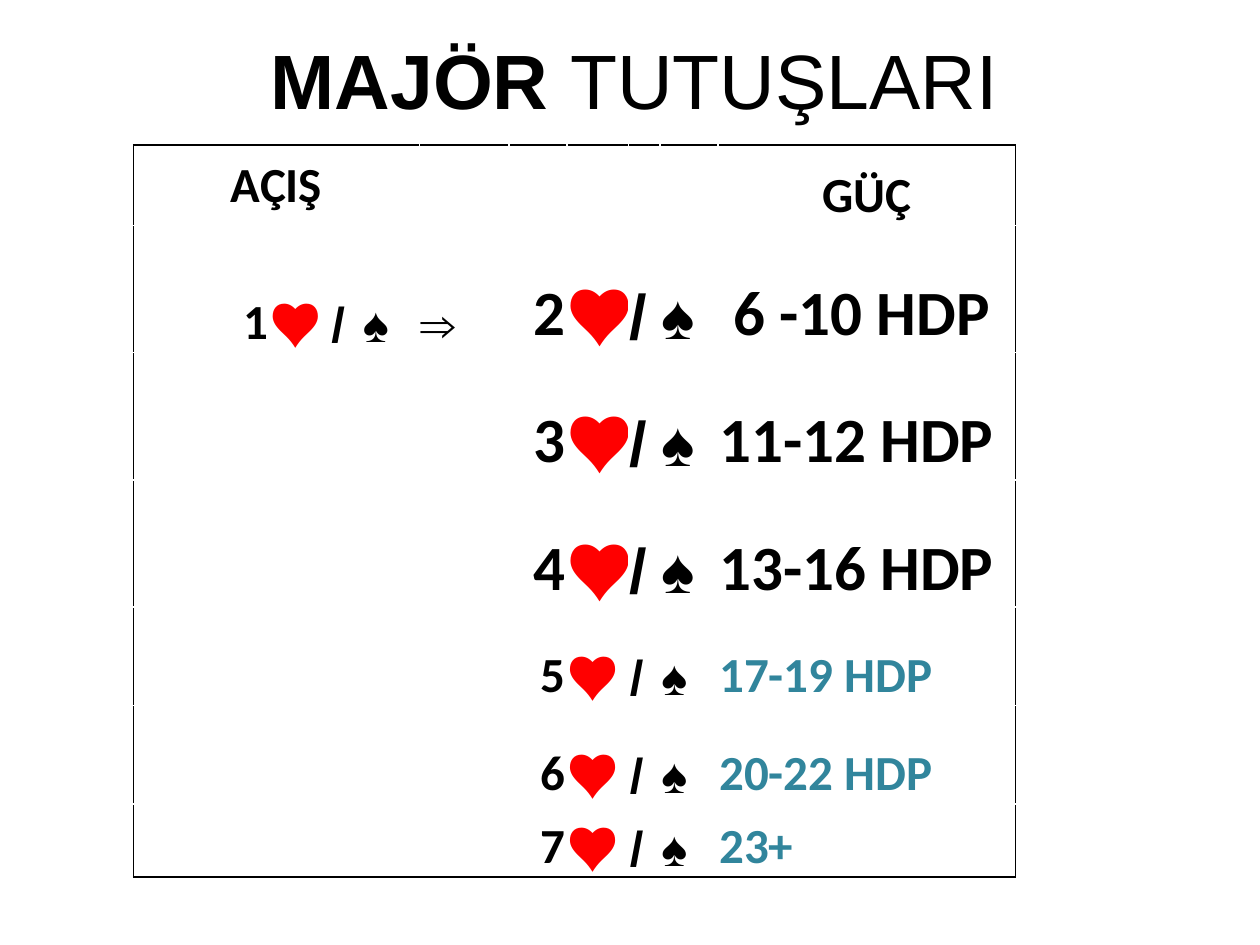
"""Build the slide of major suit raises with their strength ranges."""
from lxml import etree
from pptx import Presentation, util as u
from pptx.dml.color import RGBColor
from pptx.enum import text as t
from pptx.oxml.ns import qn

INK = {"black": "000000", "red": "FF0000", "teal": "31859C", "white": "FFFFFF"}
MID, LOW = t.MSO_ANCHOR.MIDDLE, t.MSO_ANCHOR.BOTTOM
LEFT, MIDDLE, RIGHT = t.PP_ALIGN.LEFT, t.PP_ALIGN.CENTER, t.PP_ALIGN.RIGHT


def write(para, words, size=28, font="Calibri", ink="black", bold=True, align=LEFT):
    para.alignment = align
    run = para.add_run()
    run.text = words
    run.font.size = u.Pt(size)
    run.font.name = font
    run.font.bold = bold
    run.font.color.rgb = RGBColor.from_string(INK[ink])


def edge(cell, sides):
    props = cell._tc.get_or_add_tcPr()
    for spot, side in enumerate(sides):
        line = etree.Element(qn("a:ln" + side), w=str(u.Pt(1)))
        fill = etree.SubElement(line, qn("a:solidFill"))
        etree.SubElement(fill, qn("a:srgbClr"), val=INK["black"])
        props.insert(spot, line)


deck = Presentation()
deck.slide_width, deck.slide_height = u.Inches(10), u.Inches(7.5)
slide = deck.slides.add_slide(deck.slide_layouts[6])

wide = [1.08, 0.48, 0.25, 0.46, 0.71, 0.46, 0.49, 0.25, 0.46, 2.36]
high = [0.64, 1.01, 1.01, 1.01, 0.78, 0.78, 0.58]
frame = slide.shapes.add_table(len(high), len(wide), u.Inches(1.06), u.Inches(1.15),
                               u.Inches(sum(wide)), u.Inches(sum(high)))
grid = frame.table
grid.first_row = grid.horz_banding = False
for col, width in zip(grid.columns, wide):
    col.width = u.Inches(width)
for row, height in zip(grid.rows, high):
    row.height = u.Inches(height)

for r in range(len(high)):
    for c in range(len(wide)):
        cell = grid.cell(r, c)
        cell.fill.background()
        cell.vertical_anchor = LOW
        cell.margin_left = cell.margin_right = cell.margin_top = u.Inches(0.01)
        cell.margin_bottom = 0
        rim = {"L": c == 0, "R": c == len(wide) - 1, "T": r == 0, "B": r == len(high) - 1}
        edge(cell, [side for side, on in rim.items() if on])

start = grid.cell(0, 0)
start.merge(grid.cell(0, 3))
start.vertical_anchor = MID
write(start.text_frame.paragraphs[0], "AÇIŞ", align=MIDDLE)
write(grid.cell(0, 9).text_frame.paragraphs[0], "GÜÇ", align=MIDDLE)
write(grid.cell(1, 4).text_frame.paragraphs[0], "⇒", font="Arial")

bids = [(1, 0, "1", 28)]
power = [" 6 -10 HDP", "11-12 HDP", "13-16 HDP", "17-19 HDP", "20-22 HDP", "23+"]
for r, words in enumerate(power, 1):
    size, ink = (36, "black") if r < 4 else (28, "teal")
    bids.append((r, 5, str(r + 1), size))
    cell = grid.cell(r, 9)
    write(cell.text_frame.paragraphs[0], words, size=size, ink=ink)
    if r > 3:
        cell.fill.solid()
        cell.fill.fore_color.rgb = RGBColor.from_string(INK["white"])

for r, c, level, size in bids:
    parts = [(level, "Calibri", "black", RIGHT), ("♥", "Calibri", "red", LEFT),
             ("/", "Arial", "black", LEFT), ("♠", "Arial", "black", LEFT)]
    for step, (words, font, ink, align) in enumerate(parts):
        para = grid.cell(r, c + step).text_frame.paragraphs[0]
        write(para, words, size=size, font=font, ink=ink, align=align)

box = slide.shapes.add_textbox(u.Inches(1.69), u.Inches(0.21), u.Inches(6.69), u.Inches(0.84))
box.text_frame.word_wrap = True
box.text_frame.auto_size = t.MSO_AUTO_SIZE.SHAPE_TO_FIT_TEXT
title = box.text_frame.paragraphs[0]
write(title, "MAJÖR ", size=44, font="Arial", align=MIDDLE)
write(title, "TUTUŞLARI", size=44, font="Arial", bold=False, align=MIDDLE)

deck.save("out.pptx")
